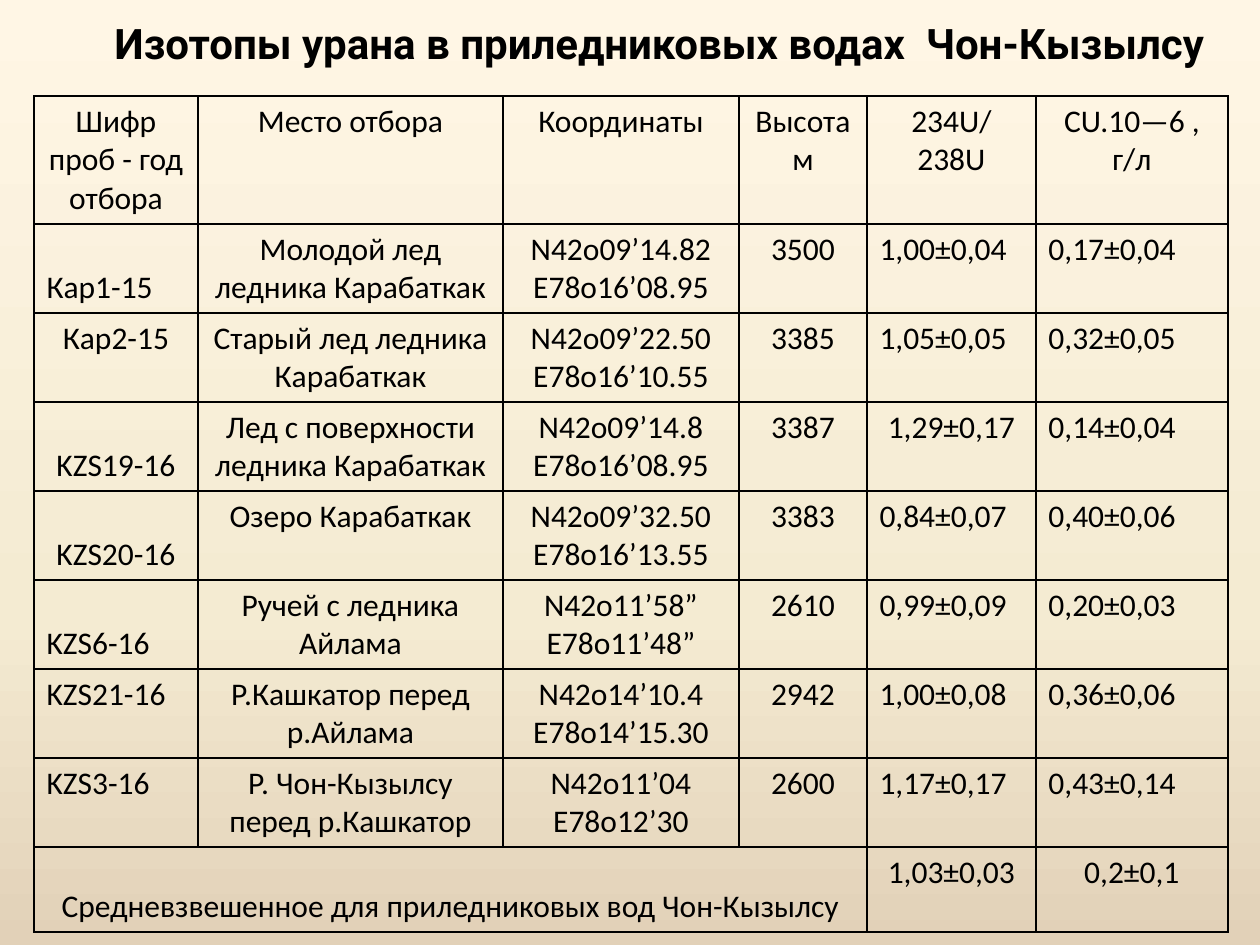
import pptx
import copy
import lxml.etree
import pptx.util
import pptx.oxml.ns
import pptx.dml.color
import pptx.enum.text

EMU_PER_PX = 914400 / 126
BLACK = pptx.dml.color.RGBColor(0x00, 0x00, 0x00)
CREAM = pptx.dml.color.RGBColor(0xFF, 0xF6, 0xE5)
SAND = pptx.dml.color.RGBColor(0xF4, 0xEB, 0xD2)
TAN = pptx.dml.color.RGBColor(0xE2, 0xD1, 0xB8)

LEFT = pptx.enum.text.PP_ALIGN.LEFT
CENTER = pptx.enum.text.PP_ALIGN.CENTER
TOP = pptx.enum.text.MSO_ANCHOR.TOP
MIDDLE = pptx.enum.text.MSO_ANCHOR.MIDDLE
BOTTOM = pptx.enum.text.MSO_ANCHOR.BOTTOM

TITLE = "Изотопы урана в приледниковых водах  Чон-Кызылсу"
HEADINGS = ["Шифр проб - год отбора", "Место отбора", "Координаты",
            "Высота м", "234U/238U", "CU.10—6 , г/л"]
SAMPLES = [
    ["Кар1-15", "Молодой лед ледника Карабаткак",
     "N42о09’14.82 E78o16’08.95", "3500", "1,00±0,04", "0,17±0,04"],
    ["Кар2-15", "Старый лед ледника Карабаткак",
     "N42о09’22.50 E78o16’10.55", "3385", "1,05±0,05", "0,32±0,05"],
    ["KZS19-16", "Лед с поверхности ледника Карабаткак",
     "N42о09’14.8 E78o16’08.95", "3387", "1,29±0,17", "0,14±0,04"],
    ["KZS20-16", "Озеро Карабаткак",
     "N42о09’32.50 E78o16’13.55", "3383", "0,84±0,07", "0,40±0,06"],
    ["KZS6-16", "Ручей с ледника Айлама",
     "N42о11’58” E78o11’48”", "2610", "0,99±0,09", "0,20±0,03"],
    ["KZS21-16", "Р.Кашкатор перед р.Айлама",
     "N42о14’10.4 E78o14’15.30", "2942", "1,00±0,08", "0,36±0,06"],
    ["KZS3-16", "Р. Чон-Кызылсу перед р.Кашкатор",
     "N42о11’04 E78o12’30", "2600", "1,17±0,17", "0,43±0,14"],
]
AVERAGE = ["Средневзвешенное для приледниковых вод Чон-Кызылсу",
           "", "", "", "1,03±0,03", "0,2±0,1"]
COLUMN_WIDTHS = [164, 305, 236, 128, 169, 192]
ROW_HEIGHTS = [128] + [89] * len(SAMPLES) + [85]
LEFT_ALIGNED = {"Кар1-15", "KZS6-16", "KZS21-16", "KZS3-16"}
BOTTOM_ANCHORED = {HEADINGS[0], "Кар1-15", "KZS19-16", "KZS20-16", "KZS6-16", AVERAGE[0]}


def px(length):
    return pptx.util.Emu(round(length * EMU_PER_PX))


class SlideBuilder:
    title_font = "Roboto"
    body_font = "Calibri"
    title_size = 24
    body_size = 18
    border_width = 1

    def __init__(self, slide):
        self.slide = slide

    def background(self, stops):
        fill = self.slide.background.fill
        fill.gradient()
        fill.gradient_angle = 270
        stop_list = next(self.slide.element.iter(pptx.oxml.ns.qn("a:gsLst")))
        while len(stop_list) < len(stops):
            stop_list.append(copy.deepcopy(stop_list[-1]))
        for stop, (position, color) in zip(fill.gradient_stops, stops):
            stop.position = position
            stop.color.rgb = color

    def add_text(self, frame, text, font_name, size, align, bold=False):
        frame.word_wrap = True
        paragraph = frame.paragraphs[0]
        paragraph.alignment = align
        run = paragraph.add_run()
        run.text = text
        run.font.name = font_name
        run.font.size = pptx.util.Pt(size)
        run.font.bold = bold
        run.font.color.rgb = BLACK

    def title(self, text, left, top, width, height):
        box = self.slide.shapes.add_textbox(px(left), px(top), px(width), px(height))
        box.text_frame.vertical_anchor = MIDDLE
        self.add_text(box.text_frame, text, self.title_font, self.title_size, CENTER, True)

    def borders(self, cell):
        properties = cell._tc.get_or_add_tcPr()
        for side in ("lnL", "lnR", "lnT", "lnB"):
            line = lxml.etree.SubElement(properties, pptx.oxml.ns.qn("a:" + side))
            line.set("w", str(int(pptx.util.Pt(self.border_width))))
            solid = lxml.etree.SubElement(line, pptx.oxml.ns.qn("a:solidFill"))
            color = lxml.etree.SubElement(solid, pptx.oxml.ns.qn("a:srgbClr"))
            color.set("val", str(BLACK))

    def cell(self, cell, text, align, anchor):
        self.borders(cell)
        cell.fill.background()
        cell.vertical_anchor = anchor
        if text:
            self.add_text(cell.text_frame, text, self.body_font, self.body_size, align)

    def table(self, rows, left, top, widths, heights):
        frame = self.slide.shapes.add_table(
            len(rows), len(widths), px(left), px(top), px(sum(widths)), px(sum(heights)))
        table = frame.table
        table.first_row = False
        table.horz_banding = False
        for column, width in zip(table.columns, widths):
            column.width = px(width)
        for row, height in zip(table.rows, heights):
            row.height = px(height)
        for r, row in enumerate(rows):
            for c, text in enumerate(row):
                is_ratio = row in SAMPLES and c >= 4 and text != "1,29±0,17"
                align = LEFT if is_ratio or text in LEFT_ALIGNED else CENTER
                anchor = BOTTOM if text in BOTTOM_ANCHORED else TOP
                self.cell(table.cell(r, c), text, align, anchor)
        return table


def main():
    deck = pptx.Presentation()
    deck.slide_width = px(1260)
    deck.slide_height = px(945)
    builder = SlideBuilder(deck.slides.add_slide(deck.slide_layouts[6]))
    builder.background([(0, CREAM), (0.65, SAND), (1, TAN)])
    builder.title(TITLE, 59, 0, 1201, 86)
    isotopes = builder.table([HEADINGS, *SAMPLES, AVERAGE], 34, 96, COLUMN_WIDTHS, ROW_HEIGHTS)
    average_row = len(SAMPLES) + 1
    isotopes.cell(average_row, 0).merge(isotopes.cell(average_row, 3))
    deck.save("out.pptx")


if __name__ == "__main__":
    main()
